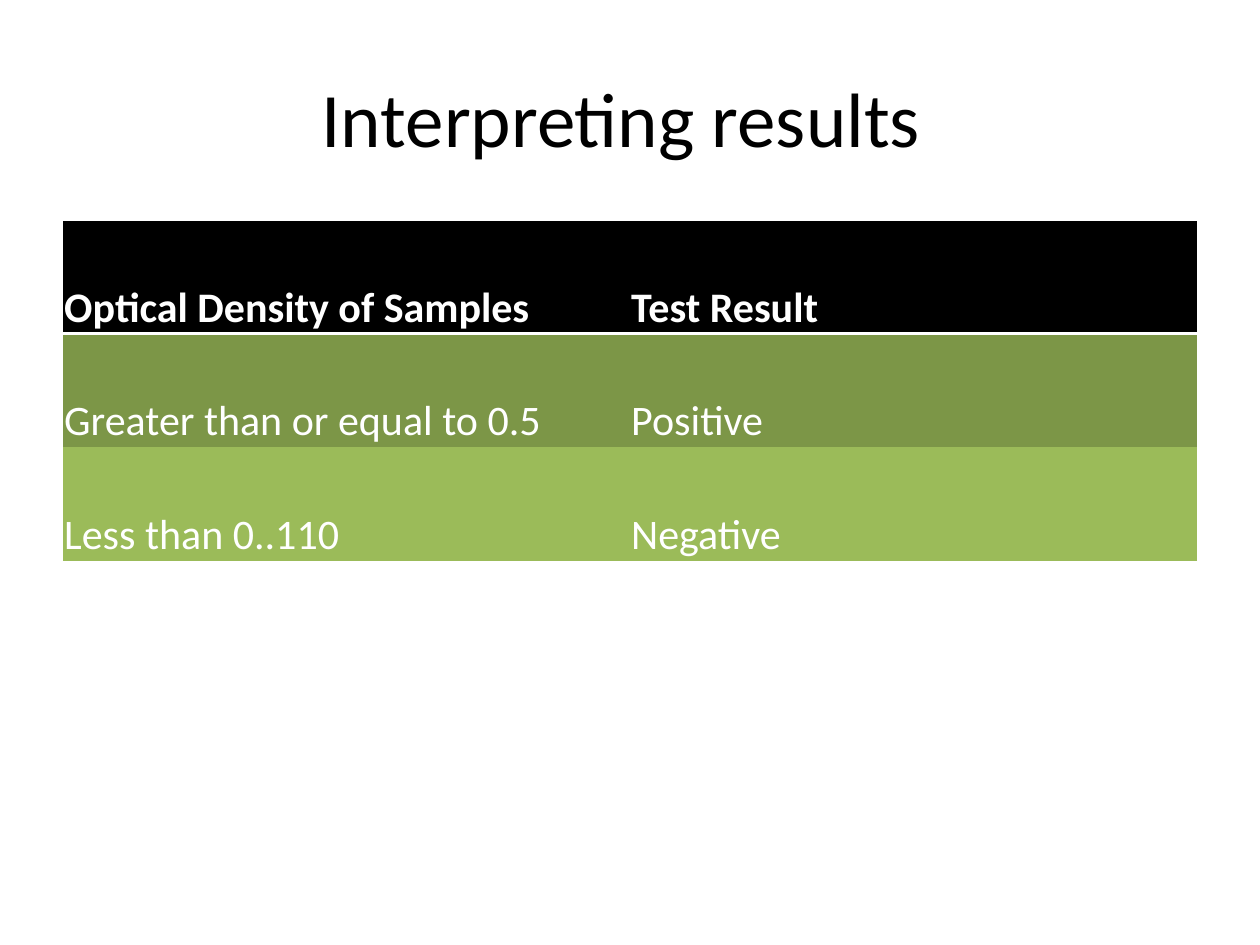
from lxml import etree
from pptx import Presentation
from pptx.dml.color import RGBColor
from pptx.enum.text import MSO_ANCHOR, PP_ALIGN
from pptx.oxml.ns import qn
from pptx.util import Inches, Pt

MIDDLE, BOTTOM = MSO_ANCHOR.MIDDLE, MSO_ANCHOR.BOTTOM
CENTER = PP_ALIGN.CENTER
FONT = "Calibri"
WHITE, BLACK = "FFFFFF", "000000"
PLAIN = "{2D5ABB26-0587-4C30-8999-92F81FD0307C}"  # no style, no grid

# Fill and texts of each table row
ROWS = [
    (BLACK, ["Optical Density of Samples", "Test Result"]),
    ("7C9647", ["Greater than or equal to 0.5", "Positive"]),
    ("9BBB59", ["Less than 0..110", "Negative"]),
]


def color(code):
    return RGBColor.from_string(code)


def add_run(para, text, size, code, bold=False):
    run = para.add_run()
    run.text = text
    run.font.name = FONT
    run.font.size = Pt(size)
    run.font.bold = bold
    run.font.color.rgb = color(code)


def add_title(slide, text):
    box = slide.shapes.add_textbox(Inches(0.5), Inches(0.3), Inches(9), Inches(1.25))
    frame = box.text_frame
    frame.word_wrap = True
    frame.vertical_anchor = MIDDLE
    para = frame.paragraphs[0]
    para.alignment = CENTER
    add_run(para, text, 44, BLACK)


def add_rule(cell, code, width):
    """Draw a line along the bottom edge of a cell."""
    line = etree.Element(qn("a:lnB"), w=str(Pt(width)))
    fill = etree.SubElement(line, qn("a:solidFill"))
    etree.SubElement(fill, qn("a:srgbClr"), val=code)
    cell._tc.get_or_add_tcPr().insert(0, line)


def fill_cell(cell, text, code, head):
    cell.fill.solid()
    cell.fill.fore_color.rgb = color(code)
    cell.vertical_anchor = BOTTOM
    cell.margin_left = cell.margin_right = cell.margin_top = Inches(0.01)
    cell.margin_bottom = 0
    add_run(cell.text_frame.paragraphs[0], text, 24, WHITE, head)
    if head:
        add_rule(cell, WHITE, 2)


def add_grid(slide, rows):
    frame = slide.shapes.add_table(
        len(rows), len(rows[0][1]),
        Inches(0.5), Inches(1.75), Inches(9), Inches(0.9 * len(rows)))
    table = frame.table
    table._tbl.tblPr.find(qn("a:tableStyleId")).text = PLAIN
    for r, (code, texts) in enumerate(rows):
        for c, text in enumerate(texts):
            fill_cell(table.cell(r, c), text, code, head=r == 0)


def main():
    deck = Presentation()
    deck.slide_width, deck.slide_height = Inches(10), Inches(7.5)
    slide = deck.slides.add_slide(deck.slide_layouts[6])
    add_title(slide, "Interpreting results ")
    add_grid(slide, ROWS)
    deck.save("out.pptx")


if __name__ == "__main__":
    main()
